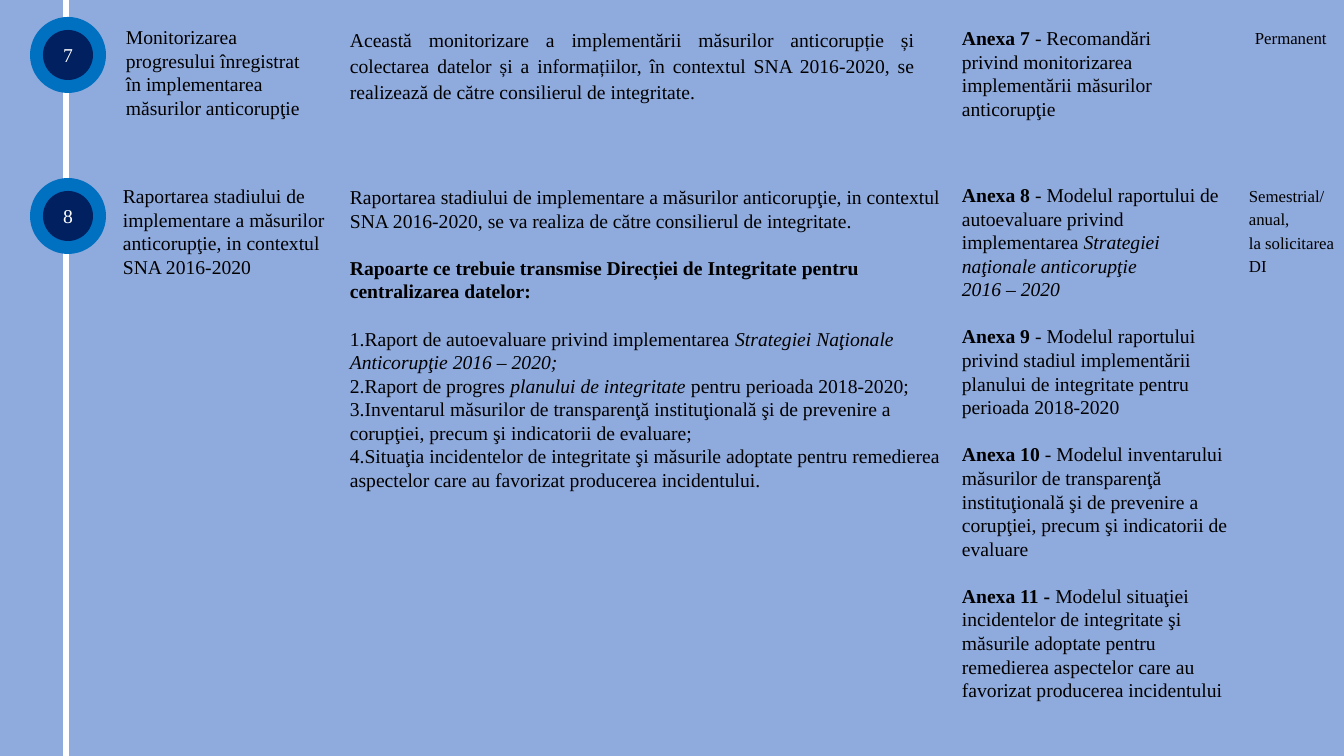
import pptx
import pptx.dml.color
import pptx.enum.shapes
import pptx.enum.text
import pptx.util
from lxml import etree

COLORS = {"sky": "8FAADC", "white": "FFFFFF", "ring": "0070C0", "core": "002060", "ink": "000000"}
FONT = "Times New Roman"
BODY, SMALL = 14, 12
GAP = 17  # points, one text line
EMU_PER_PX = 12192000 / 1344
PAGE_W, PAGE_H = 1344, 756
LINE_X = 66
RING_LEFT, RING_SIZE, CORE_INSET = 30, 76, 13
NUMBERED = {"numbered": True}

# Step number and top of its ring
STEPS = [("7", 17), ("8", 178)]

# (left, top, width, height), text format, paragraphs
# A paragraph is its runs as (text, style), then its own format
TEXTS = [
    ((116, 20, 205, 105), {}, [
        ([("Monitorizarea progresului înregistrat în implementarea măsurilor anticorupţie", "")], {}),
    ]),
    ((340, 21, 585, 89), {"align": "JUSTIFY", "spacing": 1.1, "before": 12, "after": 6}, [
        ([("Această monitorizare a implementării măsurilor anticorupție și colectarea datelor și a "
           "informațiilor, în contextul SNA 2016-2020, se realizează de către consilierul de "
           "integritate.", "")], {}),
    ]),
    ((952, 21, 255, 105), {}, [
        ([("Anexa 7 ", "b"),
          ("- Recomandări privind monitorizarea implementării măsurilor anticorupţie", "")], {}),
    ]),
    ((1245, 23, 99, 30), {"size": SMALL}, [([("Permanent", "")], {})]),
    ((113, 179, 228, 105), {}, [
        ([("Raportarea stadiului de implementare a măsurilor anticorupţie, in contextul "
           "SNA 2016-2020", "")], {}),
    ]),
    ((340, 180, 624, 319), {}, [
        ([("Raportarea stadiului de implementare a măsurilor anticorupţie, in contextul "
           "SNA 2016-2020, se va realiza de către consilierul de integritate.", "")], {"after": GAP}),
        ([("Rapoarte ce trebuie transmise Direcției de Integritate pentru centralizarea datelor:",
           "b")], {"after": GAP}),
        ([("Raport de autoevaluare privind implementarea ", ""),
          ("Strategiei Naţionale Anticorupţie 2016 – 2020;", "i")], NUMBERED),
        ([("Raport de progres ", ""), ("planului de integritate ", "i"),
          ("pentru perioada 2018-2020;", "")], NUMBERED),
        ([("Inventarul măsurilor de transparenţă instituţională şi de prevenire a corupţiei, "
           "precum şi indicatorii de evaluare;", "")], NUMBERED),
        ([("Situaţia incidentelor de integritate şi măsurile adoptate pentru remedierea "
           "aspectelor care au favorizat producerea incidentului.", "")], NUMBERED),
    ]),
    ((952, 178, 286, 532), {}, [
        ([("Anexa 8 ", "b"), ("- Modelul raportului de autoevaluare privind implementarea ", ""),
          ("Strategiei naţionale anticorupţie", "i")], {}),
        ([("2016 – 2020", "i")], {"after": GAP}),
        ([("Anexa 9 ", "b"),
          ("- Modelul raportului privind stadiul implementării planului de integritate pentru "
           "perioada 2018-2020", "")], {"after": GAP}),
        ([("Anexa 10 ", "b"),
          ("- Modelul inventarului măsurilor de transparenţă instituţională şi de prevenire a "
           "corupţiei, precum şi indicatorii de evaluare", "")], {"after": GAP}),
        ([("Anexa 11 - ", "b"),
          ("Modelul situaţiei incidentelor de integritate şi măsurile adoptate pentru remedierea "
           "aspectelor care au favorizat producerea incidentului", "")], {}),
    ]),
    ((1239, 178, 109, 102), {"size": SMALL, "spacing": 1.15}, [
        ([("Semestrial/ anual,", "")], {}),
        ([("la solicitarea DI", "")], {"after": 10}),
    ]),
]


def px(*lengths):
    return [pptx.util.Emu(round(length * EMU_PER_PX)) for length in lengths]


def rgb(name):
    return pptx.dml.color.RGBColor.from_string(COLORS[name])


def write(para, runs, size=BODY, color="ink", align="LEFT", spacing=None, before=0, after=0,
          numbered=False):
    """Fill one paragraph with styled runs ("b" bold, "i" italic)."""
    para.alignment = getattr(pptx.enum.text.PP_ALIGN, align)
    para.line_spacing = spacing
    para.space_before = pptx.util.Pt(before)
    para.space_after = pptx.util.Pt(after)
    if numbered:
        props = para._p.get_or_add_pPr()
        props.set("marL", "0")
        props.set("indent", str(-pptx.util.Inches(0.38)))
        etree.SubElement(props, pptx.oxml.ns.qn("a:buAutoNum"), type="arabicPeriod")
    for text, style in runs:
        span = para.add_run()
        span.text = text
        span.font.name = FONT
        span.font.size = pptx.util.Pt(size)
        span.font.bold = "b" in style
        span.font.italic = "i" in style
        span.font.color.rgb = rgb(color)


def add_disc(page, left, top, size, color):
    disc = page.shapes.add_shape(pptx.enum.shapes.MSO_SHAPE.OVAL, *px(left, top, size, size))
    disc.shadow.inherit = False
    disc.fill.solid()
    disc.fill.fore_color.rgb = rgb(color)
    disc.line.fill.background()
    return disc


def add_step(page, number, top):
    add_disc(page, RING_LEFT, top, RING_SIZE, "ring")
    core = add_disc(page, RING_LEFT + CORE_INSET, top + CORE_INSET,
                    RING_SIZE - 2 * CORE_INSET, "core")
    frame = core.text_frame
    frame.margin_left = frame.margin_right = frame.margin_top = frame.margin_bottom = 0
    frame.vertical_anchor = pptx.enum.text.MSO_ANCHOR.MIDDLE
    write(frame.paragraphs[0], [(number, "")], color="white", align="CENTER")


def add_text(page, place, style, paragraphs):
    box = page.shapes.add_textbox(*px(*place))
    frame = box.text_frame
    frame.word_wrap = True
    frame.auto_size = pptx.enum.text.MSO_AUTO_SIZE.SHAPE_TO_FIT_TEXT
    for index, (runs, own_style) in enumerate(paragraphs):
        para = frame.add_paragraph() if index else frame.paragraphs[0]
        write(para, runs, **{**style, **own_style})


def add_timeline(page):
    line = page.shapes.add_connector(pptx.enum.shapes.MSO_CONNECTOR.STRAIGHT,
                                     *px(LINE_X, 0, LINE_X, PAGE_H))
    line.line.color.rgb = rgb("white")
    line.line.width = pptx.util.Pt(5)
    etree.SubElement(line._element.spPr, pptx.oxml.ns.qn("a:effectLst"))


def main():
    deck = pptx.Presentation()
    deck.slide_width, deck.slide_height = px(PAGE_W, PAGE_H)
    page = deck.slides.add_slide(deck.slide_layouts[6])
    page.background.fill.solid()
    page.background.fill.fore_color.rgb = rgb("sky")
    add_timeline(page)
    for number, top in STEPS:
        add_step(page, number, top)
    for place, style, paragraphs in TEXTS:
        add_text(page, place, style, paragraphs)
    deck.save("out.pptx")


if __name__ == "__main__":
    main()
